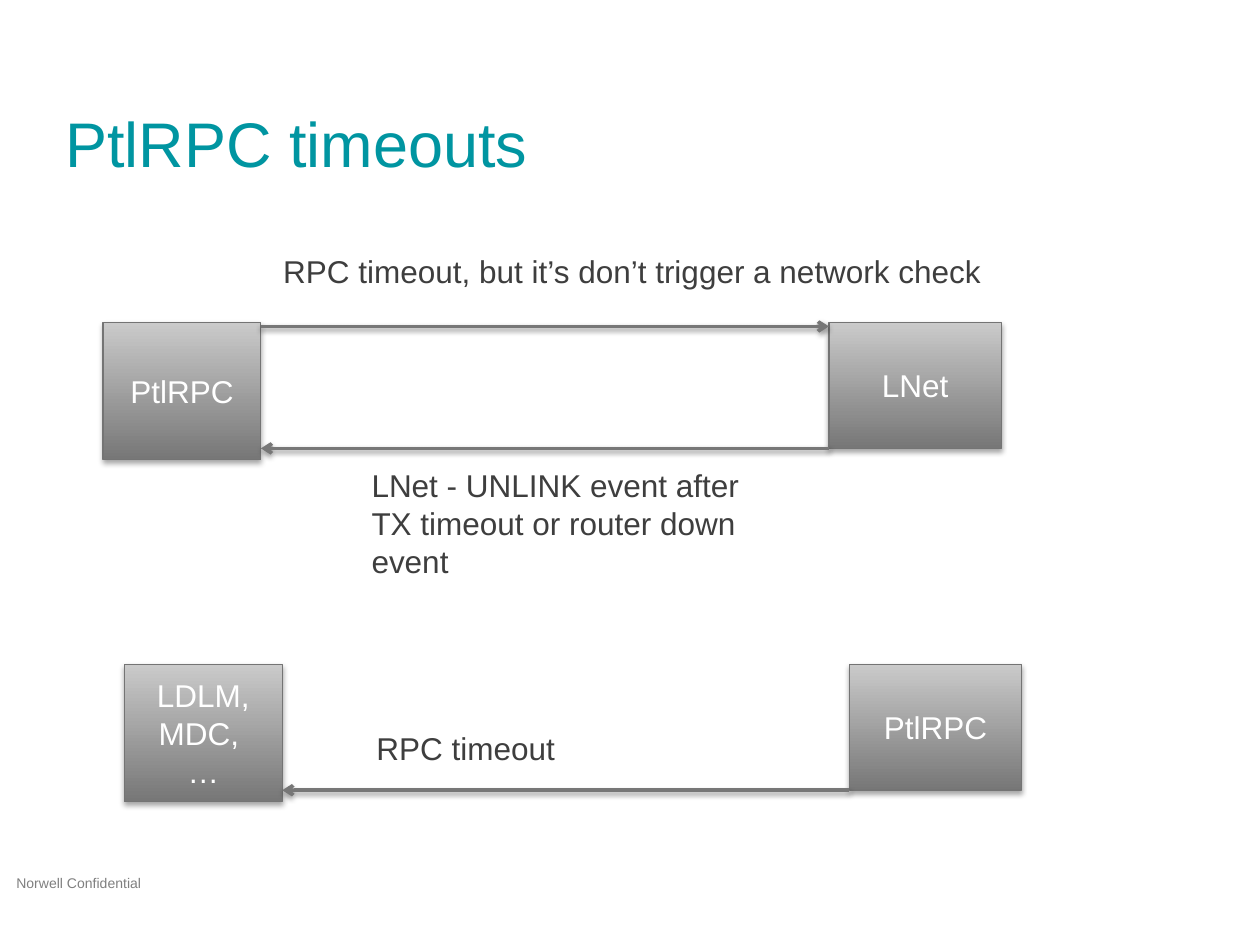
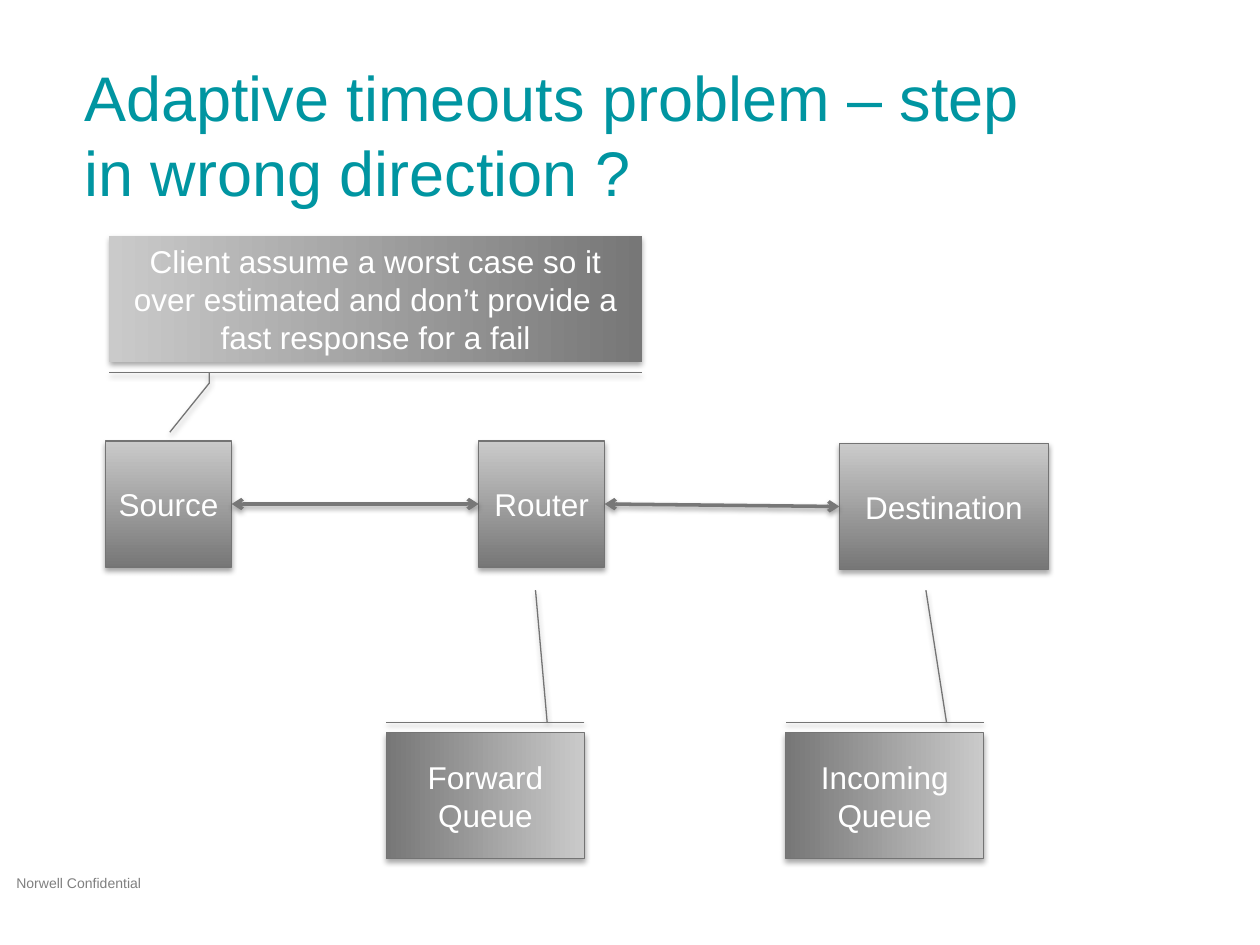
from lxml import etree
from pptx import Presentation, util as u
from pptx.dml.color import RGBColor
from pptx.enum import shapes, text
from pptx.oxml.ns import qn

FONT = "Arial"
TEAL, WHITE, INK, FOOTER_GREY = "0095A1", "FFFFFF", "3E3E3E", "7F7F7F"
DARK, LIGHT, EDGE = "777777", "CACACA", "747474"
FOOTER = "Norwell Confidential"
CALLOUT_1 = shapes.MSO_SHAPE.LINE_CALLOUT_1_BORDER_AND_ACCENT_BAR
CALLOUT_2 = shapes.MSO_SHAPE.LINE_CALLOUT_2_ACCENT_BAR


def rgb(color):
    return RGBColor.from_string(color)


def cm(*lengths):
    return [u.Cm(n) for n in lengths]


def write(tf, lines, size, color, align=text.PP_ALIGN.LEFT):
    """Put each line in its own paragraph."""
    for i, line in enumerate(lines):
        p = tf.add_paragraph() if i else tf.paragraphs[0]
        p.alignment = align
        r = p.add_run()
        r.text = line
        r.font.name, r.font.size = FONT, u.Pt(size)
        r.font.color.rgb = rgb(color)


def add_shadow(sp, opacity, distance):
    """Cast a soft shadow straight down; opacity in percent, distance in points."""
    effects = etree.SubElement(sp._element.spPr, qn("a:effectLst"))
    shadow = etree.SubElement(
        effects, qn("a:outerShdw"), blurRad=str(int(u.Pt(3.1))),
        dist=str(int(u.Pt(distance))), dir="5400000", rotWithShape="0")
    black = etree.SubElement(shadow, qn("a:srgbClr"), val="000000")
    etree.SubElement(black, qn("a:alpha"), val=str(opacity * 1000))


def add_text(s, box, line, size=18, color=INK, wrap=True):
    sp = s.shapes.add_textbox(*cm(*box))
    tf = sp.text_frame
    tf.word_wrap = wrap
    tf.auto_size = text.MSO_AUTO_SIZE.SHAPE_TO_FIT_TEXT
    write(tf, [line], size, color)
    return sp


def add_slide(prs, title, title_box):
    """Start a blank slide with the shared title and footer."""
    s = prs.slides.add_slide(prs.slide_layouts[6])
    add_text(s, (0.08, 17.5, 3.66, 0.61), FOOTER, 8, FOOTER_GREY)
    tf = add_text(s, title_box, title, 36, TEAL).text_frame
    tf.auto_size = text.MSO_AUTO_SIZE.NONE
    tf.vertical_anchor = text.MSO_ANCHOR.MIDDLE
    tf.margin_top = tf.margin_bottom = u.Cm(0.25)
    return s


def add_node(s, box, *lines, preset=shapes.MSO_SHAPE.RECTANGLE):
    sp = s.shapes.add_shape(preset, *cm(*box))
    sp.fill.gradient()
    sp.fill.gradient_angle = 90
    for stop, color in zip(sp.fill.gradient_stops, (DARK, LIGHT)):
        stop.color.rgb = rgb(color)
    sp.line.color.rgb = rgb(EDGE)
    sp.line.width = u.Pt(0.75)
    add_shadow(sp, 35, 1.8)
    sp.text_frame.vertical_anchor = text.MSO_ANCHOR.MIDDLE
    write(sp.text_frame, lines, 18, WHITE, text.PP_ALIGN.CENTER)
    return sp


def add_callout(s, box, *lines, preset, rotation, vert, pointer):
    """Add a callout turned on its side; box is where it shows, with level text."""
    x, y, w, h = box
    upright = (x + (w - h) / 2, y + (h - w) / 2, h, w)
    sp = add_node(s, upright, *lines, preset=preset)
    sp.rotation = rotation
    for i, value in enumerate(pointer):
        sp.adjustments[i] = value
    sp._element.txBody.bodyPr.set("vert", vert)


def add_arrow(s, start, end, double=False):
    c = s.shapes.add_connector(
        shapes.MSO_CONNECTOR.STRAIGHT, *cm(*start, *end))
    c.line.color.rgb = rgb(DARK)
    c.line.width = u.Pt(2)
    for tag in ("a:headEnd", "a:tailEnd") if double else ("a:tailEnd",):
        etree.SubElement(c.line._get_or_add_ln(), qn(tag), type="arrow")
    add_shadow(c, 38, 1.6)
    return c


def link(s, left, right):
    """Join the facing sides of two nodes with a two-headed arrow."""
    c = add_arrow(s, (0, 0), (0, 0), double=True)
    c.begin_connect(left, 3)
    c.end_connect(right, 1)


def build_rpc_timeouts(prs):
    s = add_slide(prs, "PtlRPC timeouts", (1.07, 1.73, 16.74, 2.26))
    add_node(s, (2.08, 6.5, 3.18, 2.77), "PtlRPC")
    add_node(s, (16.71, 6.5, 3.48, 2.54), "LNet")
    add_arrow(s, (5.26, 6.58), (16.71, 6.58))
    add_arrow(s, (16.71, 9.04), (5.26, 9.04))
    add_text(s, (5.46, 4.95, 14.73, 1.02),
             "RPC timeout, but it’s don’t trigger a network check", wrap=False)
    add_text(s, (7.24, 9.27, 8.46, 2.57),
             "LNet - UNLINK event after TX timeout or router down event")

    add_node(s, (2.51, 13.39, 3.18, 2.77), "LDLM, MDC, ", "…")
    add_node(s, (17.12, 13.39, 3.48, 2.54), "PtlRPC")
    add_arrow(s, (17.12, 15.93), (5.69, 15.93))
    add_text(s, (7.34, 14.58, 4.14, 1.02), "RPC timeout", wrap=False)


def build_adaptive_timeouts(prs):
    s = add_slide(prs, "Adaptive timeouts problem – step in wrong direction ?",
                  (1.45, 1.57, 19.99, 2.26))
    source = add_node(s, (2.13, 8.89, 2.54, 2.54), "Source")
    router = add_node(s, (9.65, 8.89, 2.54, 2.54), "Router")
    destination = add_node(s, (16.92, 8.94, 4.22, 2.54), "Destination")
    queues = ((7.79, ("Forward", "Queue"), 0.247),
              (15.84, ("Incoming Queue",), 0.292))
    for x, lines, tip in queues:
        add_callout(s, (x, 14.77, 3.99, 2.54), *lines, preset=CALLOUT_1,
                    rotation=90, vert="vert270",
                    pointer=(0.188, -0.083, tip, -1.131))
    link(s, source, router)
    link(s, router, destination)
    add_callout(s, (2.2, 4.76, 10.74, 2.54),
                "Client assume a worst case so it over estimated and "
                "don’t provide a fast response for a fail",
                preset=CALLOUT_2, rotation=270, vert="vert",
                pointer=(0.188, -0.083, 0.188, -0.167, 0.114, -0.556))


def main():
    prs = Presentation()
    prs.slide_width, prs.slide_height = cm(25.4, 19.05)
    build_rpc_timeouts(prs)
    build_adaptive_timeouts(prs)
    prs.save("out.pptx")


if __name__ == "__main__":
    main()
